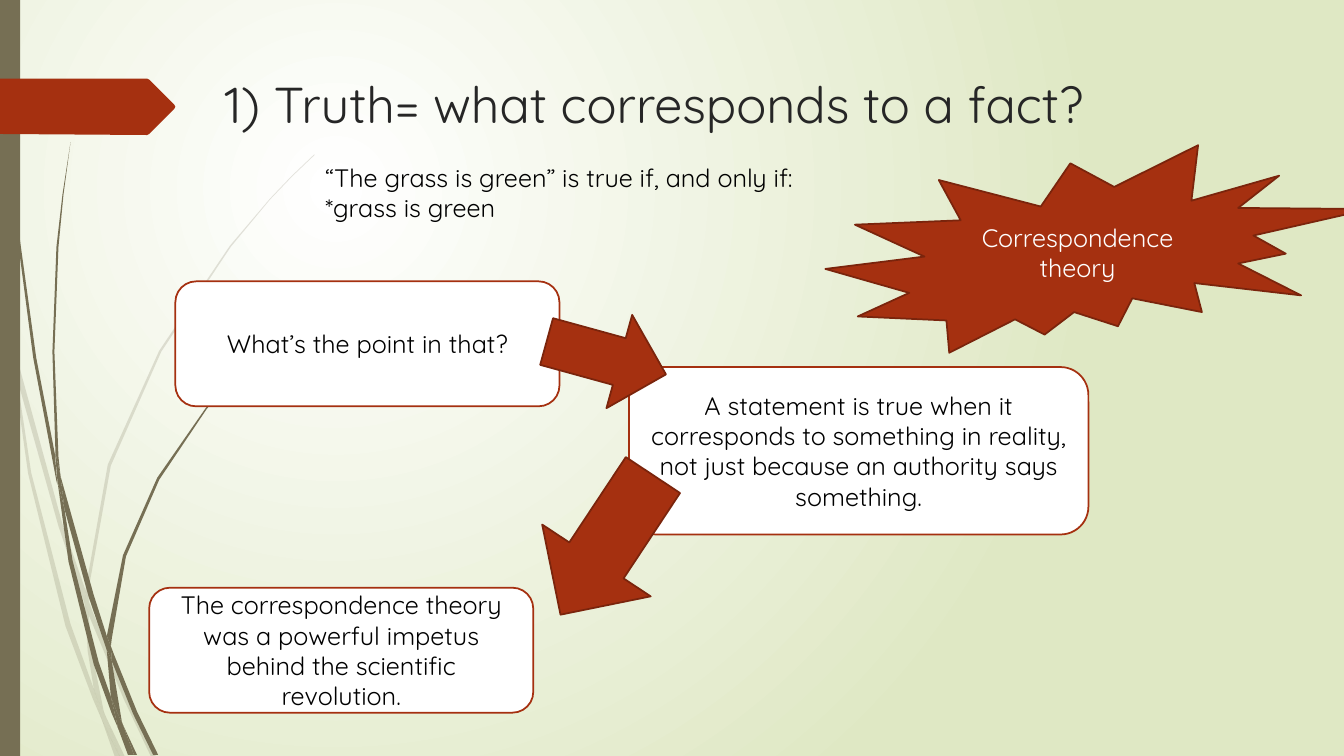
import pptx
import pptx.dml.color
import pptx.enum.shapes
import pptx.enum.text
import pptx.oxml
import pptx.oxml.ns
import pptx.util

Cm = pptx.util.Cm
SHAPE = pptx.enum.shapes.MSO_SHAPE
ALIGN = pptx.enum.text.PP_ALIGN
ANCHOR = pptx.enum.text.MSO_ANCHOR
qn = pptx.oxml.ns.qn

FONT = "Quicksand"
RUST, DARK_RUST, OLIVE, PALE = "A53010", "7A240C", "766F54", "DFE8C4"
WHITE, BLACK, TITLE = "FFFFFF", "000000", "262626"
UNIT = Cm(0.0254)

PALE_GRASS = [
    [(11, 350), (9, 322), (0, 282), (0, 299), (10, 344)],
    [(58, 522), (84, 599), (85, 586), (62, 520), (14, 345), (17, 376)],
    [(92, 607), (88, 596), (88, 610), (123, 694), (150, 751), (155, 751), (127, 692)],
    [(119, 751), (124, 751), (105, 711)],
    [(93, 683), (70, 619), (31, 469), (17, 376), (11, 350), (28, 470), (65, 621),
     (92, 693), (101, 714), (99, 707)],
    [(84, 599), (87, 646), (93, 683), (96, 692), (105, 711), (103, 706), (91, 646),
     (88, 610), (88, 608)],
    [(88, 584), (110, 462), (160, 349), (229, 245), (268, 198), (290, 175), (312, 154),
     (312, 153), (289, 175), (268, 197), (228, 244), (158, 348), (107, 461), (85, 584),
     (85, 586), (88, 596)],
    [(101, 714), (114, 751), (119, 751)],
    [(88, 608), (88, 610), (88, 596), (85, 586), (84, 599)],
    [(96, 692), (93, 683), (99, 707), (101, 714), (119, 751), (105, 711)],
]
DARK_GRASS = [
    [(7, 110), (17, 233), (33, 355), (56, 477), (57, 481), (55, 457), (55, 453),
     (36, 355), (19, 232), (8, 109), (5, 48), (4, 0), (3, 0), (4, 48)],
    [(88, 592), (106, 645), (106, 633), (106, 631), (93, 590), (60, 472), (64, 505)],
    [(113, 649), (110, 641), (111, 656), (132, 708), (152, 749), (157, 749), (136, 706)],
    [(110, 691), (98, 657), (72, 556), (64, 505), (57, 477), (68, 557), (93, 659),
     (111, 708), (117, 722), (116, 717)],
    [(60, 472), (58, 453), (54, 349), (58, 245), (63, 193), (70, 141), (62, 193),
     (56, 245), (52, 349), (55, 449)],
    [(133, 749), (136, 749), (122, 719)],
    [(57, 477), (64, 505), (60, 472), (55, 449), (55, 453)],
    [(111, 633), (125, 552), (158, 476), (205, 406), (231, 374), (245, 359), (261, 344),
     (260, 344), (245, 358), (231, 373), (204, 405), (156, 474), (122, 551), (106, 631),
     (110, 641)],
    [(117, 722), (127, 749), (131, 749)],
    [(106, 645), (110, 691), (116, 706), (122, 719), (121, 716), (111, 656), (109, 651)],
    [(106, 645), (109, 651), (111, 656), (110, 641), (106, 631), (106, 633)],
    [(116, 706), (110, 691), (116, 717), (117, 722), (130, 749), (133, 749), (122, 719)],
]
TAG = [(0, 78), (146, 78), (148, 79), (173, 104), (174, 106), (173, 108), (148, 133),
       (146, 134), (0, 133)]


def rgb(value):
    """Turn a hex string into a colour."""
    return pptx.dml.color.RGBColor.from_string(value)


def paint(sp, fill, line=None):
    """Give a shape a flat fill and an optional outline."""
    sp.shadow.inherit = False
    sp.fill.solid()
    sp.fill.fore_color.rgb = rgb(fill)
    if line:
        sp.line.color.rgb = rgb(line)
        sp.line.width = pptx.util.Pt(1.25)
    else:
        sp.line.fill.background()


def write(sp, lines, size, color, align=ALIGN.LEFT, anchor=ANCHOR.TOP):
    """Fill a text frame with one paragraph per line."""
    tf = sp.text_frame
    tf.word_wrap = True
    tf.vertical_anchor = anchor
    tf.text = "\n".join(lines)
    for p in tf.paragraphs:
        p.alignment = align
        p.font.name = FONT
        p.font.size = pptx.util.Pt(size)
        p.font.color.rgb = rgb(color)


def add_shape(slide, kind, box, fill, line=None, text=None, color=BLACK, rotation=0):
    """Add a preset shape with optional centred text."""
    sp = slide.shapes.add_shape(kind, *(Cm(v) for v in box))
    sp.rotation = rotation
    paint(sp, fill, line)
    if text:
        write(sp, [text], 18, color, ALIGN.CENTER, ANCHOR.MIDDLE)


def add_text(slide, box, lines, size, color):
    """Add a wrapped text box."""
    write(slide.shapes.add_textbox(*(Cm(v) for v in box)), lines, size, color)


def add_outline(shapes, x, y, points, fill, opacity=100):
    """Draw a closed outline measured from the given corner."""
    fb = shapes.build_freeform(*points[0], scale=UNIT)
    fb.add_line_segments(points[1:])
    sp = fb.convert_to_shape(Cm(x), Cm(y))
    paint(sp, fill)
    if opacity < 100:
        clr = sp._element.spPr.find(qn("a:solidFill"))[0]
        clr.append(pptx.oxml.parse_xml(
            f'<a:alpha {pptx.oxml.ns.nsdecls("a")} val="{opacity * 1000}"/>'))


def add_background(slide):
    """Set the round white-to-green gradient."""
    fill = slide.background.fill
    fill.gradient()
    for stop, position, color in zip(fill.gradient_stops, (0, 1), (WHITE, PALE)):
        stop.position = position
        stop.color.rgb = rgb(color)
    grad = next(slide._element.iter(qn("a:gradFill")))
    grad.replace(grad.find(qn("a:lin")), pptx.oxml.parse_xml(
        f'<a:path {pptx.oxml.ns.nsdecls("a")} path="circle">'
        '<a:fillToRect l="50000" t="50000" r="100000" b="100000"/></a:path>'))


def add_side(slide, x, y, height):
    """Draw the grass, the side bar and the title tag."""
    for pieces, opacity in ((PALE_GRASS, 20), (DARK_GRASS, 100)):
        group = slide.shapes.add_group_shape()
        for points in pieces:
            add_outline(group.shapes, x, y, points, OLIVE, opacity)
    add_shape(slide, SHAPE.RECTANGLE, (x, y, 0.51, height), OLIVE)
    add_outline(slide.shapes, x, y, TAG, RUST)


def add_heading(slide, x, y, width):
    """Write the title and the example below it."""
    add_text(slide, (x, y, width, 4.11), ["1) Truth= what corresponds to a fact?"], 36, TITLE)
    add_text(slide, (x + 2.54, y + 2.23, 20.83, 1.8),
             ["“The grass is green” is true if, and only if:", "*grass is green"], 18, BLACK)


def add_argument(slide, x, y):
    """Draw the three linked cards."""
    cards = [
        (0.66, 0, 9.68, 3.15, "What’s the point in that?"),
        (12.09, 2.16, 11.58, 4.22, "A statement is true when it corresponds to something "
         "in reality, not just because an authority says something."),
        (0, 7.72, 9.68, 3.15, "The correspondence theory was a powerful impetus "
         "behind the scientific revolution."),
    ]
    arrows = [(9.96, 0.71, 3.12, 2.44, 15.4), (9.42, 5, 4.22, 3.28, 123.5)]
    for dx, dy, w, h, text in cards:
        add_shape(slide, SHAPE.ROUNDED_RECTANGLE, (x + dx, y + dy, w, h), WHITE, RUST, text)
    for dx, dy, w, h, angle in arrows:
        add_shape(slide, SHAPE.RIGHT_ARROW, (x + dx, y + dy, w, h), RUST, DARK_RUST,
                  rotation=angle)


def main():
    """Build the slide and save it."""
    prs = pptx.Presentation()
    prs.slide_width, prs.slide_height = Cm(33.87), Cm(19.05)
    slide = prs.slides.add_slide(prs.slide_layouts[6])
    add_background(slide)
    add_side(slide, 0, 0, 19.05)
    add_heading(slide, 5.41, 1.73, 26.54)
    add_argument(slide, 3.76, 7.09)
    add_shape(slide, SHAPE.EXPLOSION2, (20.8, 3.66, 13.72, 5.23), RUST, DARK_RUST,
              "Correspondence theory", WHITE)
    prs.save("out.pptx")


if __name__ == "__main__":
    main()
